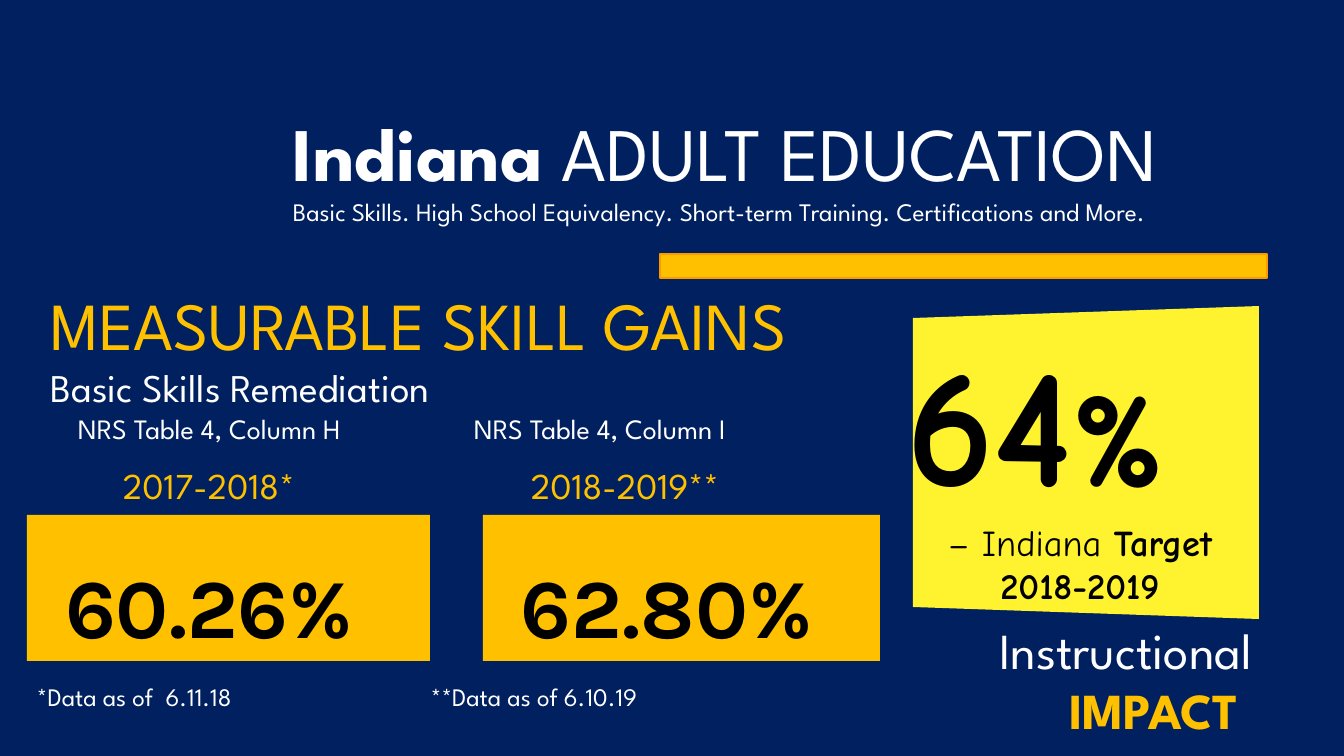
from pptx import Presentation
from pptx.dml.color import RGBColor
from pptx.enum.shapes import MSO_SHAPE
from pptx.enum.text import MSO_ANCHOR, PP_ALIGN
from pptx.util import Pt

PX = 12192000 / 1344
RECT = MSO_SHAPE.RECTANGLE
TOP, MIDDLE = MSO_ANCHOR.TOP, MSO_ANCHOR.MIDDLE
LEFT, CENTER, RIGHT = PP_ALIGN.LEFT, PP_ALIGN.CENTER, PP_ALIGN.RIGHT
SPARTAN, COMIC, KARLA = "League Spartan", "Comic Neue", "Karla"
COLORS = {"navy": "002060", "gold": "FFC000", "orange": "FF9900",
          "note": "FFF22F", "white": "FFFFFF", "black": "000000"}


def px(n):
    return round(n * PX)


def rgb(name):
    return RGBColor.from_string(COLORS[name])


def add_run(p, text, size, color="white", bold=False, font=SPARTAN):
    r = p.add_run()
    r.text = text
    r.font.size = Pt(size)
    r.font.name = font
    r.font.bold = bold
    r.font.color.rgb = rgb(color)


def add_text(s, x, y, w, h, paragraphs, align=LEFT, anchor=TOP):
    tf = s.shapes.add_textbox(px(x), px(y), px(w), px(h)).text_frame
    tf.word_wrap = True
    tf.vertical_anchor = anchor
    tf.margin_left = tf.margin_right = tf.margin_top = tf.margin_bottom = 0
    for i, runs in enumerate(paragraphs):
        p = tf.add_paragraph() if i else tf.paragraphs[0]
        p.alignment = align
        for run in runs:
            add_run(p, *run)
    return tf


def paint(sp, fill, line=None):
    sp.shadow.inherit = False
    sp.fill.solid()
    sp.fill.fore_color.rgb = rgb(fill)
    if line:
        sp.line.color.rgb = rgb(line)
        sp.line.width = Pt(1)
    else:
        sp.line.fill.background()


def add_rect(s, x, y, w, h, line=None):
    sp = s.shapes.add_shape(RECT, px(x), px(y), px(w), px(h))
    paint(sp, "gold", line)
    return sp


def title_block(s, x, y, w, h):
    add_text(s, x, y, w, h, [
        [("Indiana", 54, "white", True), (" ADULT EDUCATION", 54)],
        [("Basic Skills. High School Equivalency. Short-term Training. "
          "Certifications and More.", 18)]])


def skills_heading(s, x, y, w, h):
    add_text(s, x, y, w, h, [
        [("MEASURABLE SKILL GAINS", 48, "gold")],
        [("Basic Skills Remediation", 28)]])


def year_column(s, x, y, w, h, caption, year, value, note):
    for (text, dx), dy, size, color in ((caption, -104, 20, "white"),
                                        (year, -52, 26, "gold"),
                                        (note, 166, 18, "white")):
        add_text(s, x + dx, y + dy, w - 20, 44, [[(text, size, color)]])
    tf = add_rect(s, x, y, w, h).text_frame
    tf.vertical_anchor = TOP
    tf.margin_left, tf.margin_top = px(38), px(39)
    tf.margin_right = tf.margin_bottom = 0
    p = tf.paragraphs[0]
    p.alignment = LEFT
    add_run(p, value, 60, "black", True, KARLA)


def target_note(s, x, y, w, h):
    fb = s.shapes.build_freeform(px(x), px(y + 12))
    fb.add_line_segments([(px(x + w), px(y)), (px(x + w), px(y + h)),
                          (px(x), px(y + h - 12))])
    paint(fb.convert_to_shape(), "note")
    tf = add_text(s, x - 7, y + 10, w + 2, h - 20, [
        [("64", 120, "black", True, COMIC), ("%", 96, "black", True, COMIC)],
        [("– Indiana ", 26, "black", False, COMIC),
         ("Target", 26, "black", True, COMIC)],
        [("2018-2019", 26, "black", True, COMIC)]], CENTER, MIDDLE)
    tf.paragraphs[0].alignment = LEFT


def impact_block(s, x, y, w, h):
    add_text(s, x, y, w, h, [[("Instructional ", 36),
                              ("IMPACT ", 36, "gold", True)]], RIGHT)


def main():
    prs = Presentation()
    prs.slide_width, prs.slide_height = px(1344), px(756)
    s = prs.slides.add_slide(prs.slide_layouts[6])
    s.background.fill.solid()
    s.background.fill.fore_color.rgb = rgb("navy")
    title_block(s, 293, 106, 1023, 153)
    skills_heading(s, 51, 283, 832, 130)
    year_column(s, 27, 515, 403, 146, ("NRS Table 4, Column H", 51),
                ("2017-2018*", 96), "60.26%", ("*Data as of  6.11.18", 10))
    year_column(s, 483, 515, 397, 146, ("NRS Table 4, Column I", -9),
                ("2018-2019**", 48), "62.80%", ("**Data as of 6.10.19", -52))
    target_note(s, 913, 306, 346, 313)
    impact_block(s, 945, 619, 307, 122)
    add_rect(s, 660, 254, 607, 24, "orange")
    prs.save("out.pptx")


if __name__ == "__main__":
    main()
